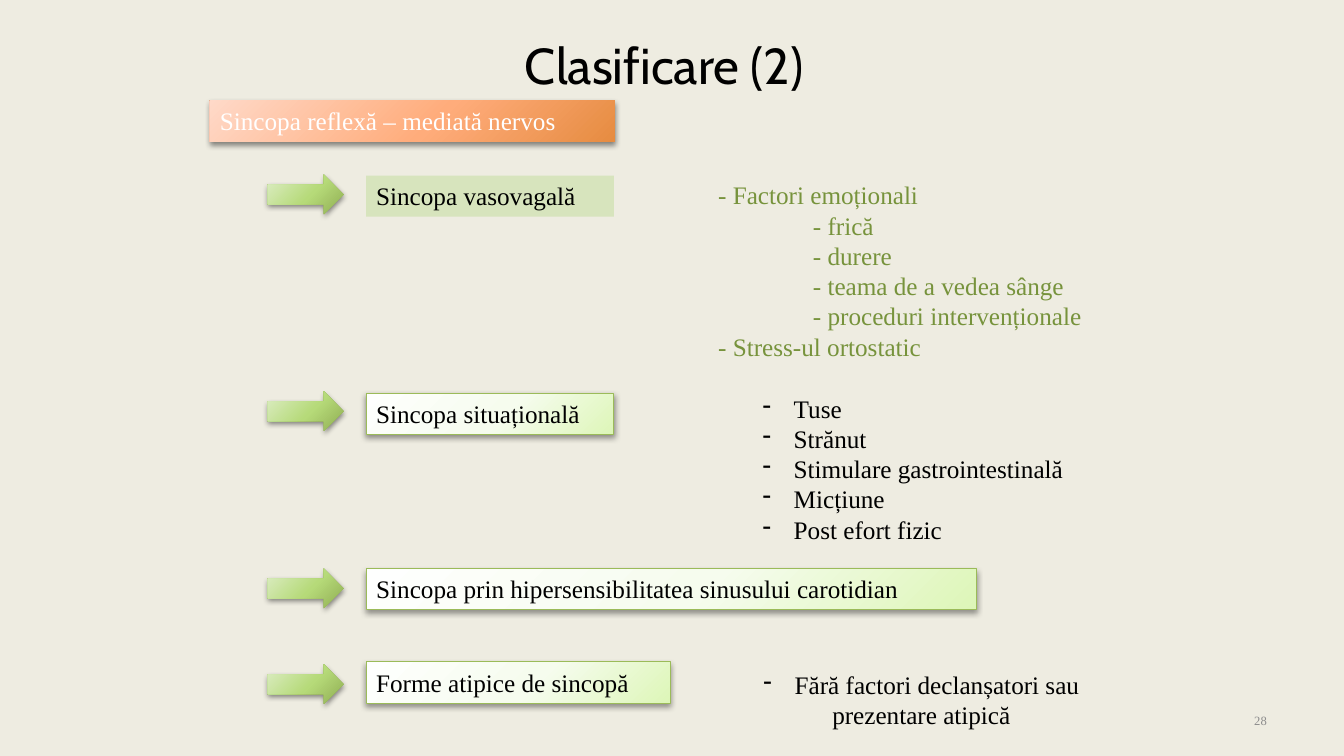
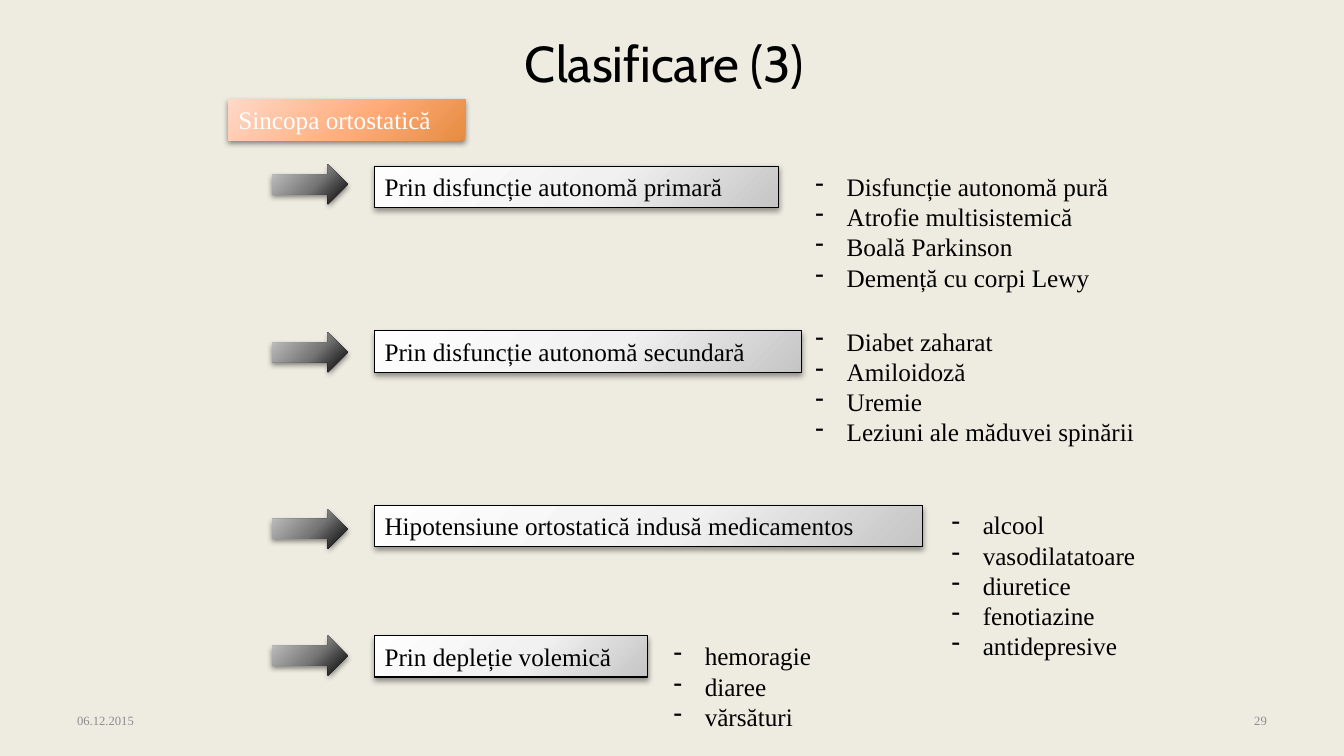
from dataclasses import dataclass
from typing import Optional

from pptx import Presentation
from pptx.dml.color import RGBColor
from pptx.enum.shapes import MSO_SHAPE as Preset
from pptx.enum.text import MSO_ANCHOR as Anchor, MSO_AUTO_SIZE as AutoSize, PP_ALIGN as Align
from pptx.oxml import parse_xml
from pptx.oxml.ns import qn
from pptx.util import Emu, Inches, Pt

# Grid: 160 columns by 90 rows over the slide
WIDTH, HEIGHT = 12192000, 6858000
COL, ROW = WIDTH // 160, HEIGHT // 90
BAR_ROWS, LINE_ROWS, PADDING_ROWS = 4.9, 3.6, 1.2
ARROW_COLS, ARROW_ROWS = 9, 4.7
HANG = 0.31  # bullet indent, inches

# Shared colours and fonts
CREAM = RGBColor(0xEE, 0xEC, 0xE1)
BLACK = RGBColor(0x00, 0x00, 0x00)
WHITE = RGBColor(0xFF, 0xFF, 0xFF)
GREY = RGBColor(0x8C, 0x8C, 0x8C)
OLIVE = RGBColor(0x77, 0x93, 0x3C)
LEAF = RGBColor(0x9B, 0xBB, 0x59)
PALE_LEAF = RGBColor(0xD7, 0xE4, 0xBD)
TITLE_FONT, BODY_FONT = "Cabin", "Times New Roman"
DRAWING_NS = "http://schemas.openxmlformats.org/drawingml/2006/main"


@dataclass(frozen=True)
class Skin:
    colours: tuple[RGBColor, ...]  # one for a plain fill, three for a glow
    outline: Optional[RGBColor] = None
    shadow_alpha: int = 45
    shadow_blur: float = 4


def glow(first: str, middle: str, last: str, outline: Optional[RGBColor] = None) -> Skin:
    colours = tuple(RGBColor.from_string(c) for c in (first, middle, last))
    return Skin(colours, outline, 40, 4.1) if outline is not None else Skin(colours)


ORANGE_BAR = glow("FFD9C8", "FFAC7B", "E68C41")
GREEN_ARROW = glow("DDEDC6", "B6DA79", "90AE53")
GREEN_BAR = glow("FEFFFE", "F6FCEE", "DDF6B8", LEAF)
FLAT_GREEN_BAR = Skin((PALE_LEAF,))
GREY_ARROW = glow("C8C8C8", "767676", "000000")
GREY_BAR = glow("FEFEFE", "F1F1F1", "C5C5C5", BLACK)


@dataclass(frozen=True)
class Line:
    text: str
    margin: float = 0
    bullet: bool = False
    align: Align = Align.LEFT


@dataclass(frozen=True)
class Details:
    col: float
    row: float
    cols: float
    lines: list[Line]
    colour: RGBColor = BLACK


@dataclass(frozen=True)
class Category:
    text: str
    row: float
    cols: float
    arrow_row: float
    details: Optional[Details] = None
    skin: Optional[Skin] = None


@dataclass(frozen=True)
class Page:
    title: str
    title_row: float
    heading: str
    heading_at: tuple[float, float, float]  # column, row, columns wide
    arrow_col: float
    bar_col: float
    arrow_skin: Skin
    bar_skin: Skin
    categories: list[Category]
    number: str
    date: str = ""


def dashes(*texts: str, margin: float = HANG) -> list[Line]:
    return [Line(text, margin, True) for text in texts]


PAGES = [
    Page("Clasificare (2)", 3.4, "Sincopa reflexă – mediată nervos", (25, 12, 48.2),
         31.9, 43.6, GREEN_ARROW, GREEN_BAR, [
             Category("Sincopa vasovagală", 20.9, 29.5, 20.8,
                      Details(83.6, 20.8, 50.6, [
                          Line("- Factori emoționali", 0.06),
                          Line("- frică", 1),
                          Line("- durere", 1),
                          Line("- teama de a vedea sânge", 1),
                          Line("- proceduri intervenționale", 1),
                          Line("- Stress-ul ortostatic", 0.06)], OLIVE),
                      FLAT_GREEN_BAR),
             Category("Sincopa situațională", 46.8, 29.5, 46.6,
                      Details(83.6, 46.2, 48, dashes(
                          "Tuse", "Strănut", "Stimulare gastrointestinală",
                          "Micțiune", "Post efort fizic", margin=0.81))),
             Category("Sincopa prin hipersensibilitatea sinusului carotidian",
                      67.7, 72.6, 67.7),
             Category("Forme atipice de sincopă", 78.8, 36.2, 79.1,
                      Details(87.1, 79.1, 45.2, [
                          Line("Fără factori declanșatori sau", HANG, True, Align.CENTER),
                          Line("prezentare atipică", align=Align.CENTER)])),
         ], "28"),
    Page("Clasificare (3)", 3.2, "Sincopa ortostatică", (27.2, 11.8, 28.2),
         32.4, 44.6, GREY_ARROW, GREY_BAR, [
             Category("Prin disfuncție autonomă primară", 19.8, 48.1, 19.6,
                      Details(95.9, 19.8, 41.5, dashes(
                          "Disfuncție autonomă pură", "Atrofie multisistemică",
                          "Boală Parkinson", "Demență cu corpi Lewy"))),
             Category("Prin disfuncție autonomă secundară", 39.4, 50.8, 39.6,
                      Details(95.9, 38.2, 44.6, dashes(
                          "Diabet zaharat", "Amiloidoză", "Uremie",
                          "Leziuni ale măduvei spinării"))),
             Category("Hipotensiune ortostatică indusă medicamentos", 60.2, 65.2, 60.6,
                      Details(112.1, 60.1, 27.6, dashes(
                          "alcool", "vasodilatatoare", "diuretice",
                          "fenotiazine", "antidepresive"))),
             Category("Prin depleție volemică", 75.7, 32.5, 75.7,
                      Details(79, 75.7, 21.2, dashes("hemoragie", "diaree", "vărsături"))),
         ], "29", "06.12.2015"),
]


def cells(col: float, row: float, cols: float, rows: float) -> tuple[Emu, ...]:
    return Emu(int(col * COL)), Emu(int(row * ROW)), Emu(int(cols * COL)), Emu(int(rows * ROW))


def write(frame, lines: list[Line], colour: RGBColor, size: float = 18,
          font: str = BODY_FONT, anchor: Anchor = Anchor.TOP) -> None:
    frame.word_wrap = True
    frame.auto_size = AutoSize.NONE
    frame.vertical_anchor = anchor
    for index, line in enumerate(lines):
        paragraph = frame.add_paragraph() if index else frame.paragraphs[0]
        paragraph.alignment = line.align
        properties = paragraph._p.get_or_add_pPr()
        properties.set("marL", str(Inches(line.margin)))
        properties.set("indent", str(-Inches(HANG) if line.bullet else 0))
        if line.bullet:
            properties.append(parse_xml(f'<a:buFontTx xmlns:a="{DRAWING_NS}"/>'))
            properties.append(parse_xml(f'<a:buChar xmlns:a="{DRAWING_NS}" char="-"/>'))
        run = paragraph.add_run()
        run.text = line.text
        run.font.name, run.font.size = font, Pt(size)
        run.font.color.rgb = colour


def dress(shape, skin: Skin) -> None:
    """Give a shape its fill, outline and soft shadow."""
    shape.shadow.inherit = False
    if skin.outline is None:
        shape.line.fill.background()
    else:
        shape.line.color.rgb = skin.outline
        shape.line.width = Pt(0.75)
    if len(skin.colours) == 1:
        shape.fill.solid()
        shape.fill.fore_color.rgb = skin.colours[0]
        return
    shape.fill.gradient()
    properties = shape._element.spPr
    stops = "".join(f'<a:gs pos="{share}000"><a:srgbClr val="{colour}"/></a:gs>'
                    for share, colour in zip((0, 55, 100), skin.colours))
    properties.replace(properties.find(qn("a:gradFill")), parse_xml(
        f'<a:gradFill xmlns:a="{DRAWING_NS}" rotWithShape="1"><a:gsLst>{stops}</a:gsLst>'
        '<a:path path="circle"><a:fillToRect l="-40000" t="-90000" r="140000" b="190000"/>'
        '</a:path></a:gradFill>'))
    properties.find(qn("a:effectLst")).append(parse_xml(
        f'<a:outerShdw xmlns:a="{DRAWING_NS}" blurRad="{Pt(skin.shadow_blur)}" '
        f'dist="{Pt(2)}" dir="5400000" rotWithShape="0"><a:srgbClr val="{BLACK}">'
        f'<a:alpha val="{skin.shadow_alpha}000"/></a:srgbClr></a:outerShdw>'))


def add_bar(slide, text: str, col: float, row: float, cols: float,
            skin: Skin, colour: RGBColor = BLACK) -> None:
    bar = slide.shapes.add_shape(Preset.RECTANGLE, *cells(col, row, cols, BAR_ROWS))
    dress(bar, skin)
    write(bar.text_frame, [Line(text)], colour)


def add_details(slide, details: Details) -> None:
    rows = len(details.lines) * LINE_ROWS + PADDING_ROWS
    box = slide.shapes.add_textbox(*cells(details.col, details.row, details.cols, rows))
    write(box.text_frame, details.lines, details.colour)


def add_footer(slide, text: str, col: float, align: Align) -> None:
    footer = slide.shapes.add_textbox(*cells(col, 83.4, 37.3, 4.8))
    write(footer.text_frame, [Line(text, align=align)], GREY, 9, anchor=Anchor.MIDDLE)


def add_page(prs, page: Page) -> None:
    slide = prs.slides.add_slide(prs.slide_layouts[5])

    # Title and heading bar
    title = slide.shapes.title
    title.left, title.top, title.width, title.height = cells(61.3, page.title_row, 40, 8.5)
    write(title.text_frame, [Line(page.title)], BLACK, 36, TITLE_FONT)
    add_bar(slide, page.heading, *page.heading_at, ORANGE_BAR, WHITE)

    # Categories: arrow, bar and details
    for category in page.categories:
        arrow = slide.shapes.add_shape(Preset.RIGHT_ARROW, *cells(
            page.arrow_col, category.arrow_row, ARROW_COLS, ARROW_ROWS))
        dress(arrow, page.arrow_skin)
        add_bar(slide, category.text, page.bar_col, category.row, category.cols,
                category.skin or page.bar_skin)
        if category.details:
            add_details(slide, category.details)

    # Footer
    if page.date:
        add_footer(slide, page.date, 8, Align.LEFT)
    add_footer(slide, page.number, 114.7, Align.RIGHT)


def main() -> None:
    prs = Presentation()
    prs.slide_width, prs.slide_height = Emu(WIDTH), Emu(HEIGHT)
    backdrop = prs.slide_master.background.fill
    backdrop.solid()
    backdrop.fore_color.rgb = CREAM
    for page in PAGES:
        add_page(prs, page)
    prs.save("out.pptx")


if __name__ == "__main__":
    main()
